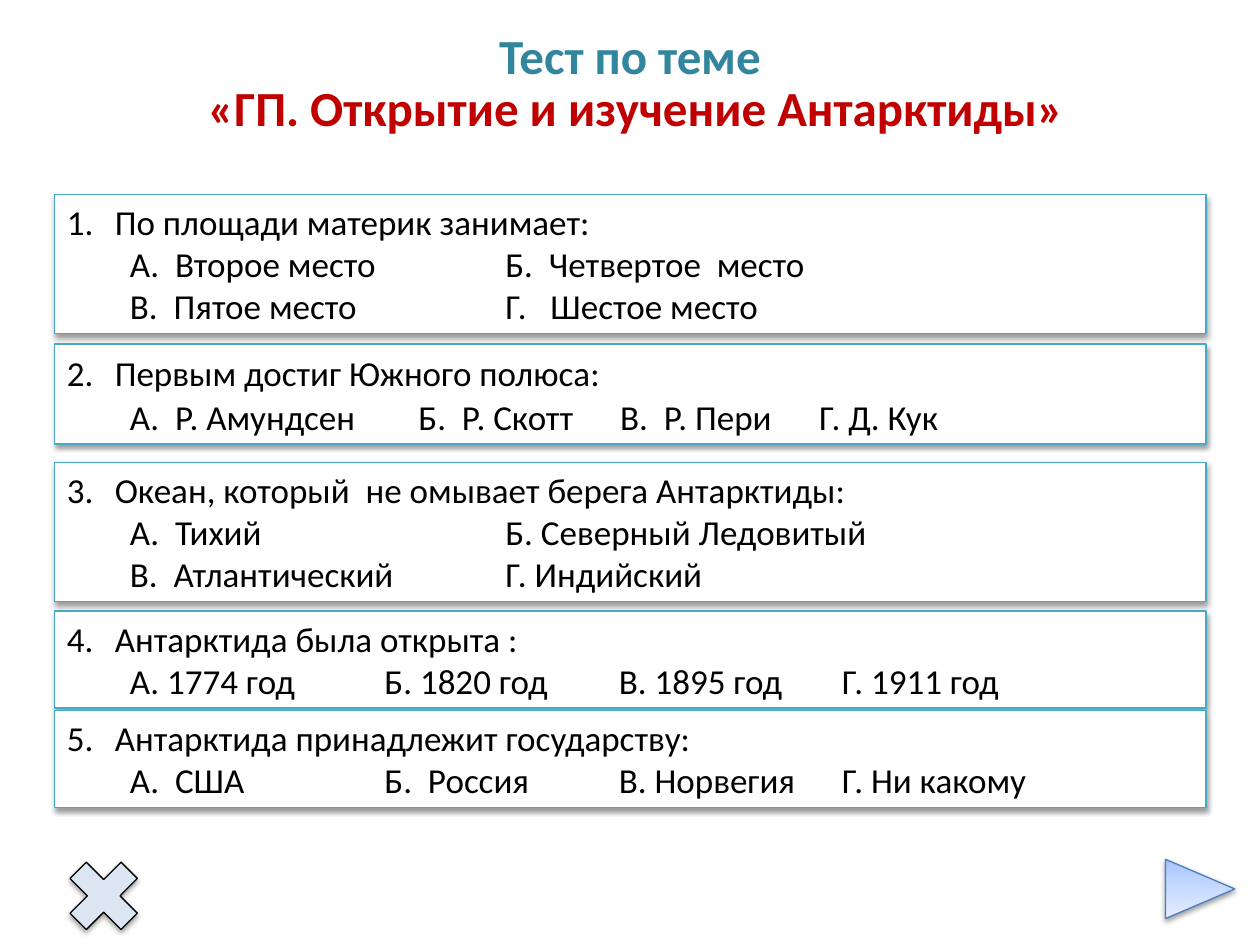
from copy import deepcopy

from lxml import etree
from pptx import Presentation
from pptx import util as u
from pptx.dml.color import RGBColor
from pptx.enum import shapes, text
from pptx.oxml.ns import qn

WIDTH, HEIGHT = u.Inches(10), u.Inches(7.5)
FONT = "Calibri"
LEFT, BOX_WIDTH = 4.33, 91.4         # shares of the slide, in percent
PADDING, LINE = 1.33, 4.47           # box padding and line height, in percent
INDENT, HANGING = 0.5, 0.38          # inches inside a box
TWO_COLUMNS = [3.48]                 # tab stops in inches
NAME_COLUMNS = [2.79, 4.39, 5.97]
FOUR_COLUMNS = [2.52, 4.38, 6.15]

# Top in percent, question, rows of answers, tab stops, exact spacing in points
QUESTIONS = [
    (20.6, "По площади материк занимает:",
     [["А.  Второе место", "Б.  Четвертое  место"],
      ["В.  Пятое место", "Г.   Шестое место"]], TWO_COLUMNS, None),
    (36.4, "Первым достиг Южного полюса:",
     [["А.  Р. Амундсен", "Б.  Р. Скотт", "В.  Р. Пери", "Г. Д. Кук"]],
     NAME_COLUMNS, 25),
    (48.93, "Океан, который  не омывает берега Антарктиды:",
     [["А.  Тихий", "Б. Северный Ледовитый"],
      ["В.  Атлантический", "Г. Индийский"]], TWO_COLUMNS, None),
    (64.67, "Антарктида была открыта :",
     [["А. 1774 год", "Б. 1820 год", "В. 1895 год", "Г. 1911 год"]],
     FOUR_COLUMNS, None),
    (75.2, "Антарктида принадлежит государству:",
     [["А.  США", "Б.  Россия", "В. Норвегия", "Г. Ни какому"]],
     FOUR_COLUMNS, None),
]


def color(hex_value):
    return RGBColor.from_string(hex_value)


def area(left, top, width, height):
    """Turn percent shares of the slide into lengths."""
    return [int(share * side / 100) for share, side in
            zip((left, top, width, height), (WIDTH, HEIGHT) * 2)]


def set_all(target, values):
    for name, value in values.items():
        setattr(target, name, value)


def add_child(parent, tag, **attributes):
    child = etree.SubElement(parent, qn(tag))
    for name, value in attributes.items():
        child.set(name, str(value))
    return child


def add_shadow(shape):
    shape.shadow.inherit = False
    effects = shape._element.spPr.find(qn("a:effectLst"))
    shadow = add_child(effects, "a:outerShdw", blurRad=40000, dist=20000,
                       dir=5400000, rotWithShape=0)
    black = add_child(shadow, "a:srgbClr", val="000000")
    add_child(black, "a:alpha", val=38000)


def add_figure(parent, preset, place, line, fill=None):
    figure = parent.shapes.add_shape(preset, *area(*place))
    if fill:
        figure.fill.solid()
        figure.fill.fore_color.rgb = color(fill)
    figure.line.color.rgb = color(line)
    figure.line.width = u.Pt(0.75)
    add_shadow(figure)
    return figure


def write(paragraph, words, size, hex_value, bold=False, **layout):
    run = paragraph.add_run()
    run.text = words
    run.font.color.rgb = color(hex_value)
    set_all(run.font, {"name": FONT, "size": u.Pt(size), "bold": bold})
    set_all(paragraph, layout)


def number(paragraph, start):
    properties = paragraph._p.get_or_add_pPr()
    properties.set("marL", str(u.Inches(HANGING)))
    properties.set("indent", str(-u.Inches(HANGING)))
    add_child(properties, "a:buFont", typeface="+mj-lt")
    add_child(properties, "a:buAutoNum", type="arabicPeriod", startAt=start)


def set_columns(paragraph, stops):
    tabs = add_child(paragraph._p.get_or_add_pPr(), "a:tabLst")
    for stop in stops:
        add_child(tabs, "a:tab", pos=u.Inches(stop), algn="l")


def add_title(slide):
    frame = slide.shapes.add_textbox(*area(0, 2.7, 100, 12.53)).text_frame
    set_all(frame, {"word_wrap": True,
                    "auto_size": text.MSO_AUTO_SIZE.SHAPE_TO_FIT_TEXT})
    layout = {"alignment": text.PP_ALIGN.CENTER, "line_spacing": u.Pt(30)}
    write(frame.paragraphs[0], "Тест по теме", 28, "31859C", True, **layout)
    write(frame.add_paragraph(), " «ГП. Открытие и изучение Антарктиды»",
          28, "C00000", True, **layout)


def add_question(group, index, top, question, answers, stops, spacing):
    pitch = spacing / 72 / 7.5 * 100 if spacing else LINE
    height = PADDING + pitch * (1 + len(answers))
    box = add_figure(group, shapes.MSO_SHAPE.RECTANGLE,
                     (LEFT, top, BOX_WIDTH, height), "46AAC5", "FFFFFF")
    frame = box.text_frame
    set_all(frame, {"word_wrap": True,
                    "vertical_anchor": text.MSO_ANCHOR.TOP,
                    "auto_size": text.MSO_AUTO_SIZE.SHAPE_TO_FIT_TEXT})
    layout = {"alignment": text.PP_ALIGN.LEFT}
    if spacing:
        layout["line_spacing"] = u.Pt(spacing)
    heading = frame.paragraphs[0]
    write(heading, question, 20, "000000", **layout)
    number(heading, index)
    for row in answers:
        options = frame.add_paragraph()
        write(options, "\t" + "\t".join(row), 20, "000000", **layout)
        set_columns(options, [INDENT] + stops)


def add_next_button(slide):
    arrow = add_figure(slide, shapes.MSO_SHAPE.PENTAGON,
                       (92.5, 90.93, 5.5, 6.27), "4B7EBC")
    arrow.adjustments[0] = 1.17
    arrow.rotation = 180
    arrow._element.spPr.find(qn("a:xfrm")).set("flipH", "1")
    arrow.fill.gradient()
    arrow.fill.gradient_angle = 90
    # The default gradient has two stops; a third goes between them
    stops = arrow._element.spPr.find(".//" + qn("a:gsLst"))
    stops.insert(1, deepcopy(stops[0]))
    shades = [(0, "A4C4FF"), (0.35, "BFD4FF"), (1, "E6EEFF")]
    for stop, (position, shade) in zip(arrow.fill.gradient_stops, shades):
        stop.position = position
        stop.color.rgb = color(shade)


def main():
    deck = Presentation()
    set_all(deck, {"slide_width": WIDTH, "slide_height": HEIGHT})
    slide = deck.slides.add_slide(deck.slide_layouts[6])

    # Close button
    add_figure(slide, shapes.MSO_SHAPE.MATH_MULTIPLY,
               (LEFT, 89.6, 7.8, 10.4), "000000", "DCE6F2")

    # Heading and test questions
    add_title(slide)
    group = slide.shapes.add_group_shape()
    for index, question in enumerate(QUESTIONS, start=1):
        add_question(group, index, *question)

    # Forward button
    add_next_button(slide)
    deck.save("out.pptx")


if __name__ == "__main__":
    main()
